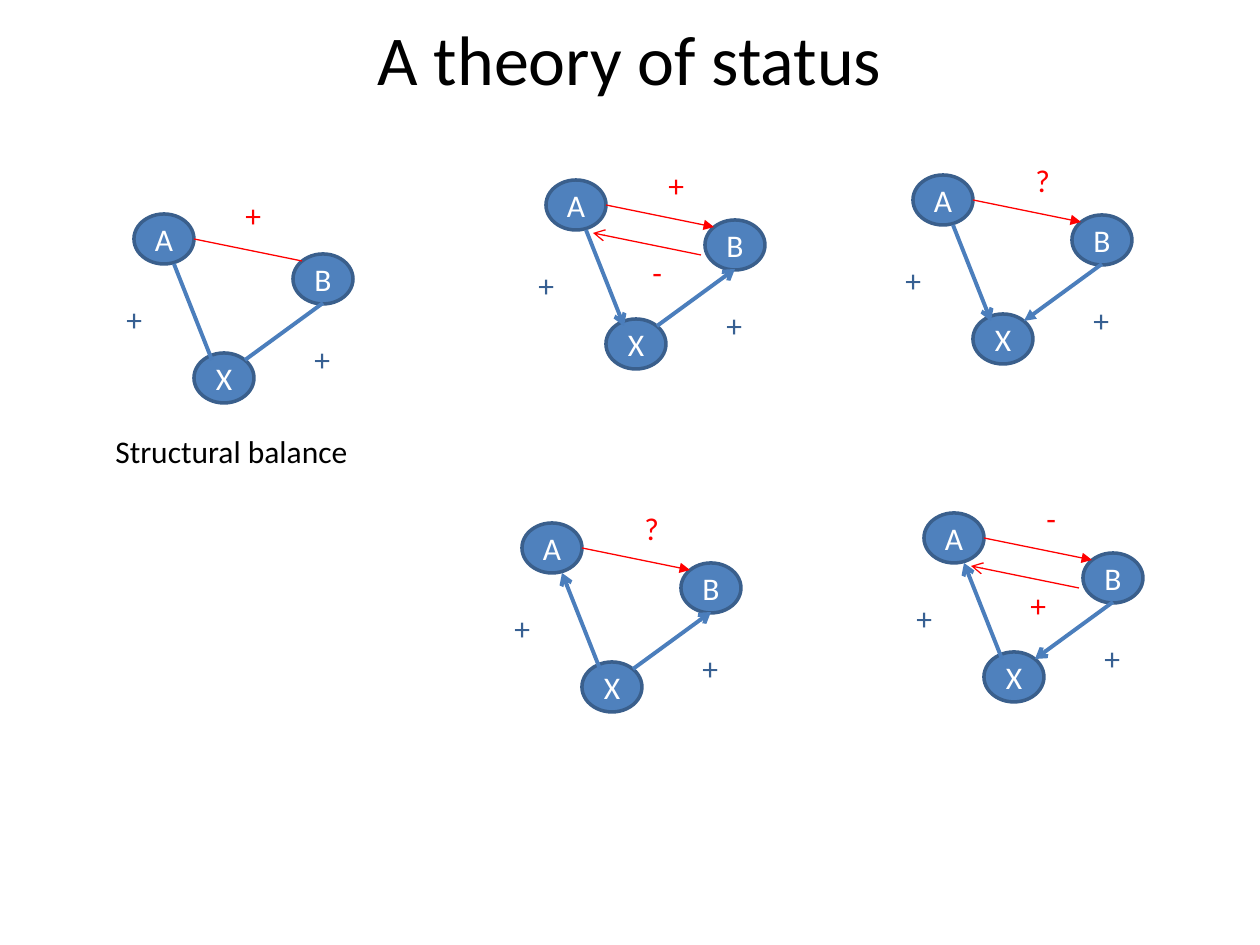
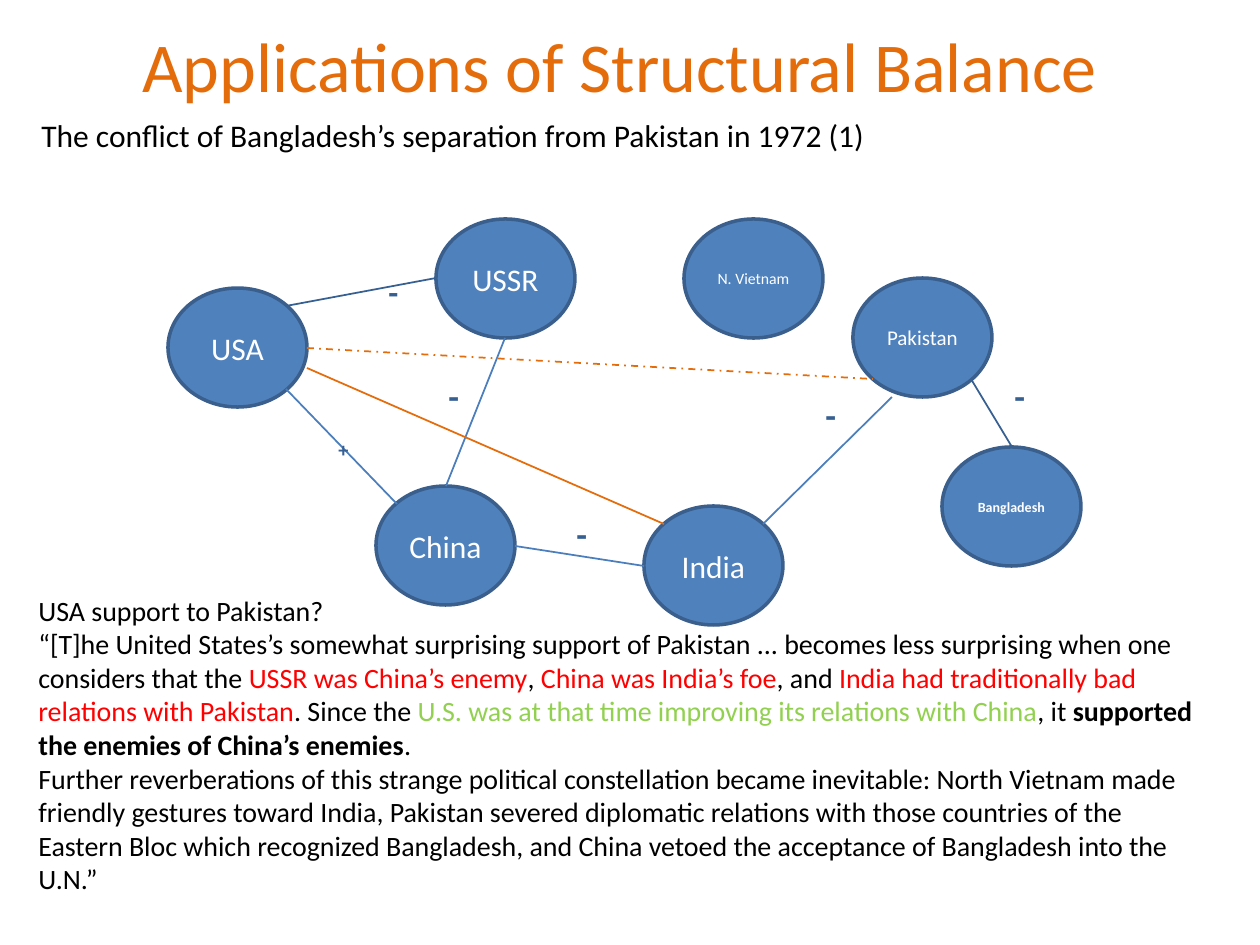
import pptx
import pptx.util
import pptx.dml.color
import pptx.enum.dml
import pptx.enum.shapes
import pptx.enum.text
import pptx.oxml.ns
from lxml import etree

PX = 914400 / 126  # EMU in one px
BLACK, WHITE, RED, GREEN = "000000", "FFFFFF", "FF0000", "92D050"
ORANGE, NAVY, BLUE, FILL, EDGE = "E46C0A", "376092", "4B7EBC", "4F81BD", "3A5F8C"
hue = pptx.dml.color.RGBColor.from_string
qn = pptx.oxml.ns.qn


def write(slide, text, box, size=18, color=BLACK, bold=False, center=False,
          oval=False, base=0):
    """Add a text box or an oval; text is a string or paragraphs of runs."""
    place = [round(n * PX) for n in box]
    if oval:
        shape = slide.shapes.add_shape(pptx.enum.shapes.MSO_SHAPE.OVAL, *place)
        shape.shadow.inherit = False
        shape.fill.solid()
        shape.fill.fore_color.rgb = hue(FILL)
        shape.line.color.rgb = hue(EDGE)
        shape.line.width = pptx.util.Pt(2)
        color, center = WHITE, True
    else:
        shape = slide.shapes.add_textbox(*place)
    frame = shape.text_frame
    frame.word_wrap = True
    if oval:
        frame.margin_left = frame.margin_right = 0
        frame.vertical_anchor = pptx.enum.text.MSO_ANCHOR.MIDDLE
    else:
        frame.auto_size = pptx.enum.text.MSO_AUTO_SIZE.SHAPE_TO_FIT_TEXT
    paras = [[(text, color, bold)]] if isinstance(text, str) else text
    for i, runs in enumerate(paras):
        para = frame.paragraphs[0] if i == 0 else frame.add_paragraph()
        if center:
            para.alignment = pptx.enum.text.PP_ALIGN.CENTER
        for words, tint, heavy in runs:
            run = para.add_run()
            run.text = words
            run.font.name = "Calibri"
            run.font.size = pptx.util.Pt(size)
            run.font.bold = heavy
            run.font.color.rgb = hue(tint)
            if base:
                run.font._element.set("baseline", str(base * 1000))


def link(slide, ends, color, width=1, head=None, tail=None, dash=None):
    """Draw a straight line; head marks its start and tail its end."""
    line = slide.shapes.add_connector(
        pptx.enum.shapes.MSO_CONNECTOR.STRAIGHT, *[round(n * PX) for n in ends])
    line.line.color.rgb = hue(color)
    line.line.width = pptx.util.Pt(width)
    if dash:
        line.line.dash_style = dash
    props = line._element.spPr
    for tag, kind in (("a:headEnd", head), ("a:tailEnd", tail)):
        if kind:
            etree.SubElement(props.find(qn("a:ln")), qn(tag), type=kind)
    etree.SubElement(props, qn("a:effectLst"))


deck = pptx.Presentation()
deck.slide_width = round(1260 * PX)
deck.slide_height = round(945 * PX)
blank = deck.slide_layouts[6]

# Slide 1: signed triads
slide = deck.slides.add_slide(blank)
write(slide, "A theory of status", (84, 9, 1091, 97), size=40, center=True)
write(slide, "Structural balance", (103, 426, 287, 50))

# Each triad: origin, arrows of A-X and X-B as (head, tail),
# arrow and sign of A to B, sign of B to A
triads = [
    (134, 214, (None, None), (None, None), None, "+", None),
    (546, 180, (None, "arrow"), (None, "arrow"), "triangle", "+", "-"),
    (924, 513, ("arrow", None), ("arrow", None), "triangle", "-", "+"),
    (522, 523, ("arrow", None), (None, "arrow"), "triangle", "?", None),
    (913, 175, (None, "arrow"), ("triangle", None), "triangle", "?", None),
]
for x, y, ax, xb, tip, sign, back in triads:
    for name, dx, dy in (("A", 0, 0), ("B", 159, 40), ("X", 60, 139)):
        write(slide, name, (x + dx, y + dy, 60, 50), oval=True)
    link(slide, (x + 40, y + 50, x + 78, y + 146), BLUE, 2.25, *ax)
    link(slide, (x + 111, y + 146, x + 189, y + 89), BLUE, 2.25, *xb)
    link(slide, (x + 60, y + 25, x + 168, y + 47), RED, 0.75, tail=tip)
    signs = [("+", -20, 80, NAVY), ("+", 168, 120, NAVY)]
    signs.append((sign, 110, -20, RED) if tip else (sign, 99, -24, RED))
    if back:
        link(slide, (x + 47, y + 53, x + 155, y + 75), RED, 0.75, head="arrow")
        signs.append((back, 94, 67, RED))
    for mark, dx, dy, tint in signs:
        write(slide, mark, (x + dx, y + dy, 39, 50), color=tint)

# Slide 2: web of states
slide = deck.slides.add_slide(blank)
write(slide, "Applications of Structural Balance", (74, 16, 1091, 97),
      size=40, color=ORANGE, center=True)
write(slide, "The conflict of Bangladesh’s separation from Pakistan in 1972 (1)",
      (29, 110, 1032, 50))

states = [
    ("USA", 168, 288, 18), ("USSR", 436, 219, 18), ("China", 376, 486, 18),
    ("India", 644, 506, 18), ("Pakistan", 853, 278, 12),
    ("Bangladesh", 942, 447, 8), ("N. Vietnam", 684, 219, 9),
]
for name, x, y, size in states:
    write(slide, name, (x, y, 139, 119), size=size, bold=size == 8, oval=True)

# Ties and their signs
ties = [
    ((505, 338, 446, 486), BLUE), ((515, 546, 644, 566), BLUE),
    ((286, 389, 397, 504), BLUE), ((892, 397, 763, 524), BLUE),
    ((307, 368, 664, 524), ORANGE), ((286, 306, 436, 278), NAVY),
    ((971, 379, 1012, 447), NAVY),
]
for ends, tint in ties:
    link(slide, ends, tint)
link(slide, (307, 348, 873, 379), ORANGE,
     dash=pptx.enum.dml.MSO_LINE.DASH_DOT)

marks = [
    ("-", 436, 368, 20, 0), ("-", 564, 506, 20, 0), ("+", 326, 407, 20, -25),
    ("-", 813, 387, 20, 0), ("-", 376, 228, 32, -25), ("-", 1002, 368, 20, 0),
]
for mark, x, y, size, base in marks:
    write(slide, mark, (x, y, 59, 55), size=size, color=NAVY, bold=True, base=base)

# Account of the conflict
story = [
    [("USA support to Pakistan?", BLACK, False)],
    [
        ("“[T]he United States’s somewhat surprising support of Pakistan ... "
         "becomes less surprising when one considers that the ", BLACK, False),
        ("USSR was China’s enemy", RED, False),
        (", ", BLACK, False),
        ("China was India’s foe", RED, False),
        (", and ", BLACK, False),
        ("India had traditionally bad relations with Pakistan", RED, False),
        (". Since the ", BLACK, False),
        ("U.S. was at that time improving its relations with China", GREEN, False),
        (", it ", BLACK, False),
        ("supported the enemies of China’s enemies", BLACK, True),
        (".", BLACK, False),
    ],
    [("Further reverberations of this strange political constellation became "
      "inevitable: North Vietnam made friendly gestures toward India, Pakistan "
      "severed diplomatic relations with those countries of the Eastern Bloc "
      "which recognized Bangladesh, and China vetoed the acceptance of "
      "Bangladesh into the U.N.”", BLACK, False)],
]
write(slide, story, (26, 587, 1188, 318), size=16)

deck.save("out.pptx")
